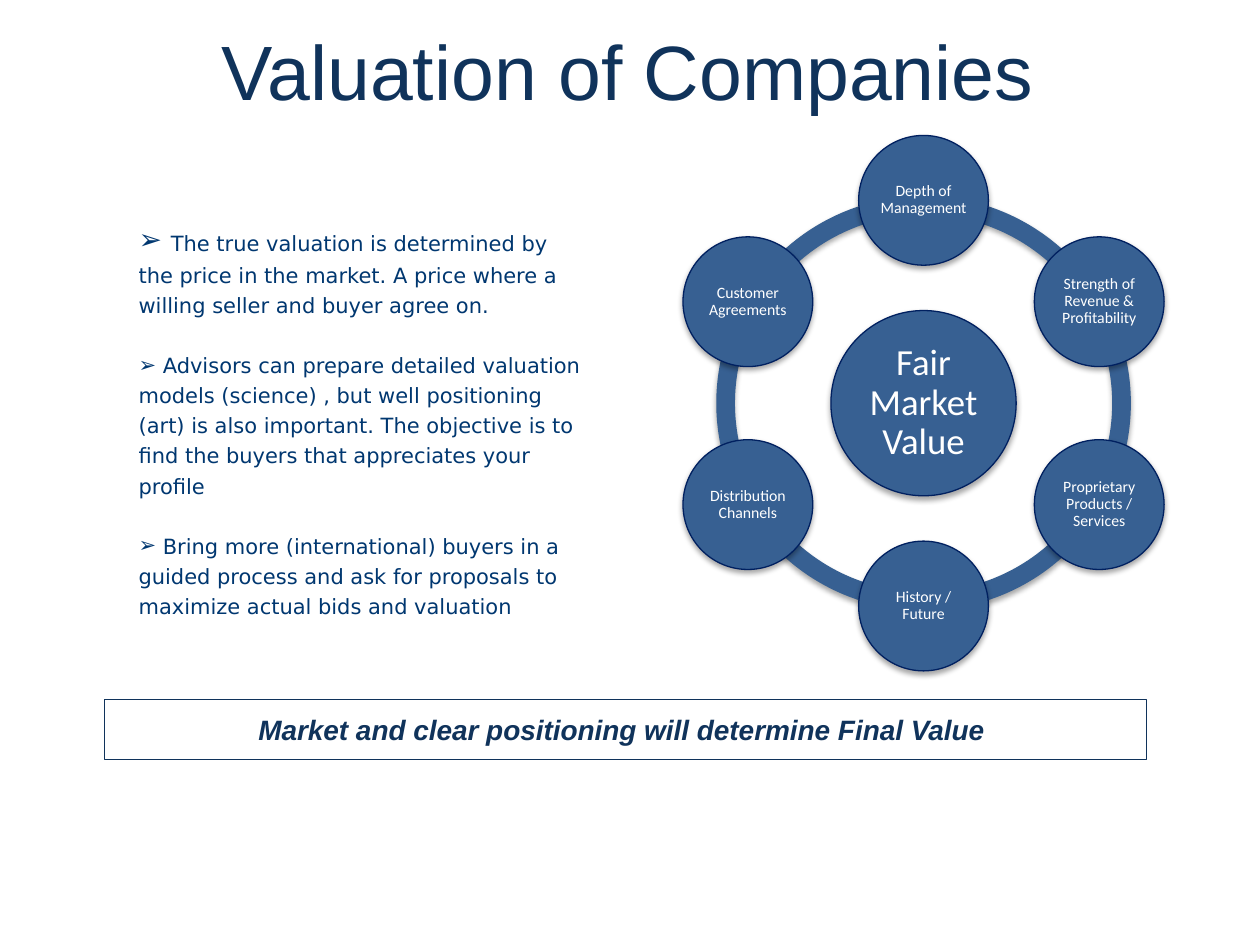
import math

from lxml import etree
from pptx import Presentation
from pptx import util as u
from pptx.dml import color
from pptx.enum import shapes, text
from pptx.oxml import ns

NAVY, BLUE, EDGE, BODY, WHITE = "10335B", "376092", "002060", "003770", "FFFFFF"
CENTRE_X, CENTRE_Y, ORBIT, RING = 7.33, 3.2, 1.61, 3.29
FACTORS = [
    "Depth of Management",
    "Strength of Revenue & Profitability",
    "Proprietary Products / Services",
    "History / Future",
    "Distribution Channels",
    "Customer Agreements",
]
POINTS = [
    "The true valuation is determined by the price in the market. "
    "A price where a willing seller and buyer agree on.",
    "Advisors can prepare detailed valuation models (science) , but well positioning (art) "
    "is also important. The objective is to find the buyers that appreciates your profile",
    "Bring more (international) buyers in a guided process and ask for proposals "
    "to maximize actual bids and valuation",
]


def rgb(value):
    return color.RGBColor.from_string(value)


class ValuationSlide:
    """Holds the style and the current slide."""

    def __init__(self, slide):
        self.slide = slide

    def place(self, shape, left, top, width, height):
        shape.left, shape.top = u.Inches(left), u.Inches(top)
        shape.width, shape.height = u.Inches(width), u.Inches(height)

    def font(self, run, name, size, hue, strong=False):
        run.font.name, run.font.size = name, u.Pt(size)
        run.font.color.rgb = rgb(hue)
        run.font.bold = run.font.italic = strong

    def margins(self, frame, side, end):
        frame.margin_left = frame.margin_right = u.Inches(side)
        frame.margin_top = frame.margin_bottom = u.Inches(end)

    def centred(self, shape, wording, name, size, hue, margin, strong=False):
        frame = shape.text_frame
        frame.text = wording
        frame.word_wrap = True
        frame.auto_size = text.MSO_AUTO_SIZE.NONE
        frame.vertical_anchor = text.MSO_ANCHOR.MIDDLE
        self.margins(frame, margin, margin)
        paragraph = frame.paragraphs[0]
        paragraph.alignment = text.PP_ALIGN.CENTER
        self.font(paragraph.runs[0], name, size, hue, strong)
        return paragraph

    def title(self, wording):
        heading = self.slide.shapes.title
        self.place(heading, 0, -0.03, 9.97, 1.17)
        self.centred(heading, wording, "Arial", 44, NAVY, 0.05)

    def bullets(self, points):
        body = self.slide.placeholders[1]
        self.place(body, 0.59, 1.67, 4.54, 3.3)
        frame = body.text_frame
        frame.auto_size = text.MSO_AUTO_SIZE.NONE
        frame.vertical_anchor = text.MSO_ANCHOR.TOP
        self.margins(frame, 0.51, 0.05)
        for index, point in enumerate(points):
            paragraph = frame.paragraphs[0] if index == 0 else frame.add_paragraph()
            paragraph.line_spacing = 1.2
            paragraph.space_before = u.Pt(17 if index else 0)
            properties = paragraph._p.get_or_add_pPr()
            properties.set("marL", "0")
            properties.set("indent", "0")
            etree.SubElement(properties, ns.qn("a:buFont"), typeface="DejaVu Sans")
            etree.SubElement(properties, ns.qn("a:buChar"), char="➢")
            for wording, size in ((" ", 12 if index else 16), (point, 12)):
                run = paragraph.add_run()
                run.text = wording
                self.font(run, "DejaVu Sans", size, BODY)

    def shadow(self, shape):
        effects = etree.SubElement(shape._element.spPr, ns.qn("a:effectLst"))
        outer = etree.SubElement(effects, ns.qn("a:outerShdw"), blurRad="40000",
                                 dist="23000", dir="5400000", rotWithShape="0")
        black = etree.SubElement(outer, ns.qn("a:srgbClr"), val="000000")
        etree.SubElement(black, ns.qn("a:alpha"), val="35000")

    def shape(self, kind, left, top, width, height, fill=None, line=None):
        item = self.slide.shapes.add_shape(kind, 0, 0, 0, 0)
        self.place(item, left, top, width, height)
        if fill:
            item.fill.solid()
            item.fill.fore_color.rgb = rgb(fill)
        else:
            item.fill.background()
        if line:
            item.line.color.rgb = rgb(line)
            item.line.width = u.Pt(0.75)
        else:
            item.line.fill.background()
        if fill:
            self.shadow(item)
        else:
            item.shadow.inherit = False
        return item

    def arc(self, start, end):
        segment = self.shape(shapes.MSO_SHAPE.BLOCK_ARC, CENTRE_X - RING / 2,
                             CENTRE_Y - RING / 2, RING, RING, BLUE)
        for index, value in enumerate((start * 0.6, end * 0.6, 0.045)):
            segment.adjustments[index] = value

    def circle(self, x, y, diameter, wording, size, margin):
        disc = self.shape(shapes.MSO_SHAPE.OVAL, x - diameter / 2, y - diameter / 2,
                          diameter, diameter, BLUE, EDGE)
        self.centred(disc, wording, "Calibri", size, WHITE, margin).line_spacing = 0.9

    def conclusion(self, wording):
        box = self.shape(shapes.MSO_SHAPE.RECTANGLE, 0.83, 5.55, 8.27, 0.48, line=NAVY)
        self.centred(box, wording, "Arial", 16, NAVY, 0.1, strong=True)


def main():
    deck = Presentation()
    deck.slide_width, deck.slide_height = u.Inches(10), u.Inches(7.5)
    page = ValuationSlide(deck.slides.add_slide(deck.slide_layouts[1]))
    page.title("Valuation of Companies")
    page.bullets(POINTS)
    page.conclusion("Market and clear positioning will determine Final Value ")
    for start in range(30, 390, 60):
        page.arc(start, (start + 60) % 360)
    page.circle(CENTRE_X, CENTRE_Y, 1.47, "Fair Market Value", 21, 0.03)
    for index, factor in enumerate(FACTORS):
        angle = math.radians(60 * index - 90)
        page.circle(CENTRE_X + ORBIT * math.cos(angle),
                    CENTRE_Y + ORBIT * math.sin(angle), 1.03, factor, 9, 0.01)
    deck.save("out.pptx")


if __name__ == "__main__":
    main()
